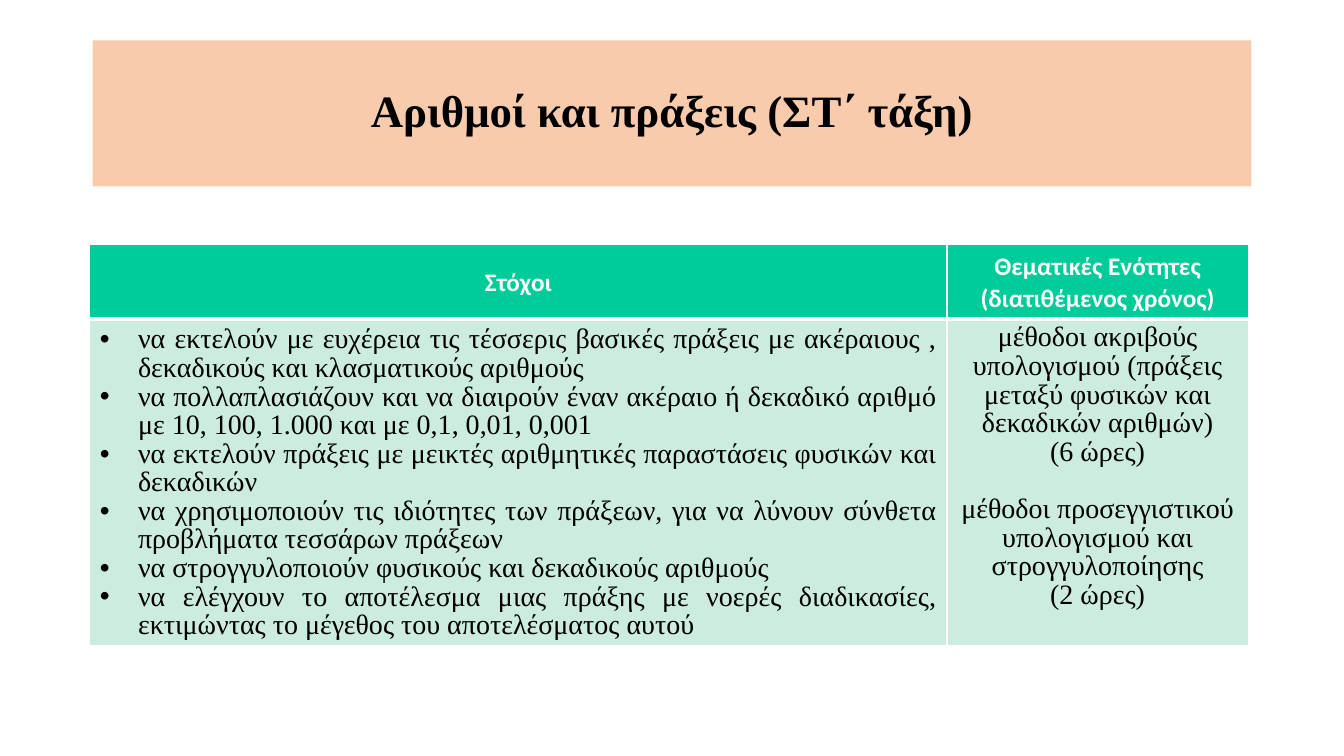
from lxml import etree
from pptx import Presentation
from pptx.dml.color import RGBColor
from pptx.enum.text import MSO_ANCHOR, PP_ALIGN
from pptx.oxml.ns import qn
from pptx.util import Inches, Pt

CENTER, JUSTIFY = PP_ALIGN.CENTER, PP_ALIGN.JUSTIFY
MIDDLE, TOP = MSO_ANCHOR.MIDDLE, MSO_ANCHOR.TOP
SERIF, SANS = "Times New Roman", "Calibri"
COLORS = {"banner": "F8CBAD", "header": "00CC99", "body": "CBECDE",
          "white": "FFFFFF", "black": "000000"}
THIN, THICK = 0.91, 2.95

TITLE = "Αριθμοί και πράξεις (ΣΤ΄ τάξη)"
HEADERS = [["Στόχοι"], ["Θεματικές Ενότητες", "(διατιθέμενος χρόνος)"]]
GOALS = [
    "να εκτελούν με ευχέρεια τις τέσσερις βασικές πράξεις με ακέραιους , "
    "δεκαδικούς και κλασματικούς αριθμούς",
    "να πολλαπλασιάζουν και να διαιρούν έναν ακέραιο ή δεκαδικό αριθμό "
    "με 10, 100, 1.000 και με 0,1, 0,01, 0,001",
    "να εκτελούν πράξεις με μεικτές αριθμητικές παραστάσεις φυσικών και δεκαδικών",
    "να χρησιμοποιούν τις ιδιότητες των πράξεων, για να λύνουν σύνθετα "
    "προβλήματα τεσσάρων πράξεων",
    "να στρογγυλοποιούν φυσικούς και δεκαδικούς αριθμούς",
    "να ελέγχουν το αποτέλεσμα μιας πράξης με νοερές διαδικασίες, "
    "εκτιμώντας το μέγεθος του αποτελέσματος αυτού",
]
UNITS = [
    "μέθοδοι ακριβούς υπολογισμού (πράξεις μεταξύ φυσικών και δεκαδικών αριθμών)",
    "(6 ώρες)",
    "μέθοδοι προσεγγιστικού υπολογισμού και στρογγυλοποίησης",
    "(2 ώρες)",
]
SECOND_UNIT = 2


def color(name):
    return RGBColor.from_string(COLORS[name])


def add_bullet(paragraph, indent=0.38):
    properties = paragraph._p.get_or_add_pPr()
    properties.set("marL", str(Inches(indent)))
    properties.set("indent", str(-Inches(indent)))
    etree.SubElement(properties, qn("a:buFont"), typeface="Arial")
    etree.SubElement(properties, qn("a:buChar"), char="•")


def write_text(text_frame, lines, size=20, font=SERIF, ink="black", bold=False,
               align=CENTER, spacing=0.92, bullets=False):
    for index, line in enumerate(lines):
        paragraph = text_frame.paragraphs[0] if index == 0 else text_frame.add_paragraph()
        paragraph.alignment = align
        paragraph.line_spacing = spacing
        if bullets:
            add_bullet(paragraph)
        run = paragraph.add_run()
        run.text = line
        run.font.size = Pt(size)
        run.font.name = font
        run.font.bold = bold
        run.font.color.rgb = color(ink)


def format_cell(cell, fill, anchor, top_inset, top_line, bottom_line):
    """Set the fill, anchor, insets and white borders of a table cell."""
    cell.fill.solid()
    cell.fill.fore_color.rgb = color(fill)
    cell.vertical_anchor = anchor
    cell.margin_left = cell.margin_right = Inches(0.1)
    cell.margin_top, cell.margin_bottom = Inches(top_inset), Inches(0.05)
    properties = cell._tc.get_or_add_tcPr()
    widths = {"lnL": THIN, "lnR": THIN, "lnT": top_line, "lnB": bottom_line}
    for position, (side, width) in enumerate(widths.items()):
        border = etree.Element(qn(f"a:{side}"), w=str(Pt(width)))
        line_fill = etree.SubElement(border, qn("a:solidFill"))
        etree.SubElement(line_fill, qn("a:srgbClr"), val=COLORS["white"])
        properties.insert(position, border)


def format_title(slide, left, top, width, height):
    title = slide.shapes.title
    title.left, title.top = Inches(left), Inches(top)
    title.width, title.height = Inches(width), Inches(height)
    title.fill.solid()
    title.fill.fore_color.rgb = color("banner")
    title.text_frame.vertical_anchor = MIDDLE
    write_text(title.text_frame, [TITLE], size=32, bold=True, spacing=0.9)


def add_goals_table(slide, left, top, width, height, units_width=2.99, header_height=0.73):
    table = slide.shapes.add_table(2, 2, Inches(left), Inches(top),
                                   Inches(width), Inches(height)).table
    table.first_row = table.horz_banding = False
    table.columns[0].width = Inches(width - units_width)
    table.columns[1].width = Inches(units_width)
    table.rows[0].height = Inches(header_height)
    table.rows[1].height = Inches(height - header_height)

    for column, lines in enumerate(HEADERS):
        cell = table.cell(0, column)
        format_cell(cell, "header", MIDDLE, 0.05, THIN, THICK)
        write_text(cell.text_frame, lines, size=18, font=SANS, ink="white",
                   bold=True, spacing=1.04)

    goals, units = table.cell(1, 0), table.cell(1, 1)
    format_cell(goals, "body", TOP, 0.07, THICK, THIN)
    write_text(goals.text_frame, GOALS, align=JUSTIFY, bullets=True)
    format_cell(units, "body", TOP, 0.05, THICK, THIN)
    write_text(units.text_frame, UNITS)
    units.text_frame.paragraphs[SECOND_UNIT].space_before = Pt(20.5)


def main():
    presentation = Presentation()
    presentation.slide_width, presentation.slide_height = Inches(13.34), Inches(7.5)
    slide = presentation.slides.add_slide(presentation.slide_layouts[5])
    format_title(slide, 0.92, 0.4, 11.5, 1.45)
    add_goals_table(slide, 0.89, 2.43, 11.5, 3.97)
    presentation.save("out.pptx")


if __name__ == "__main__":
    main()
